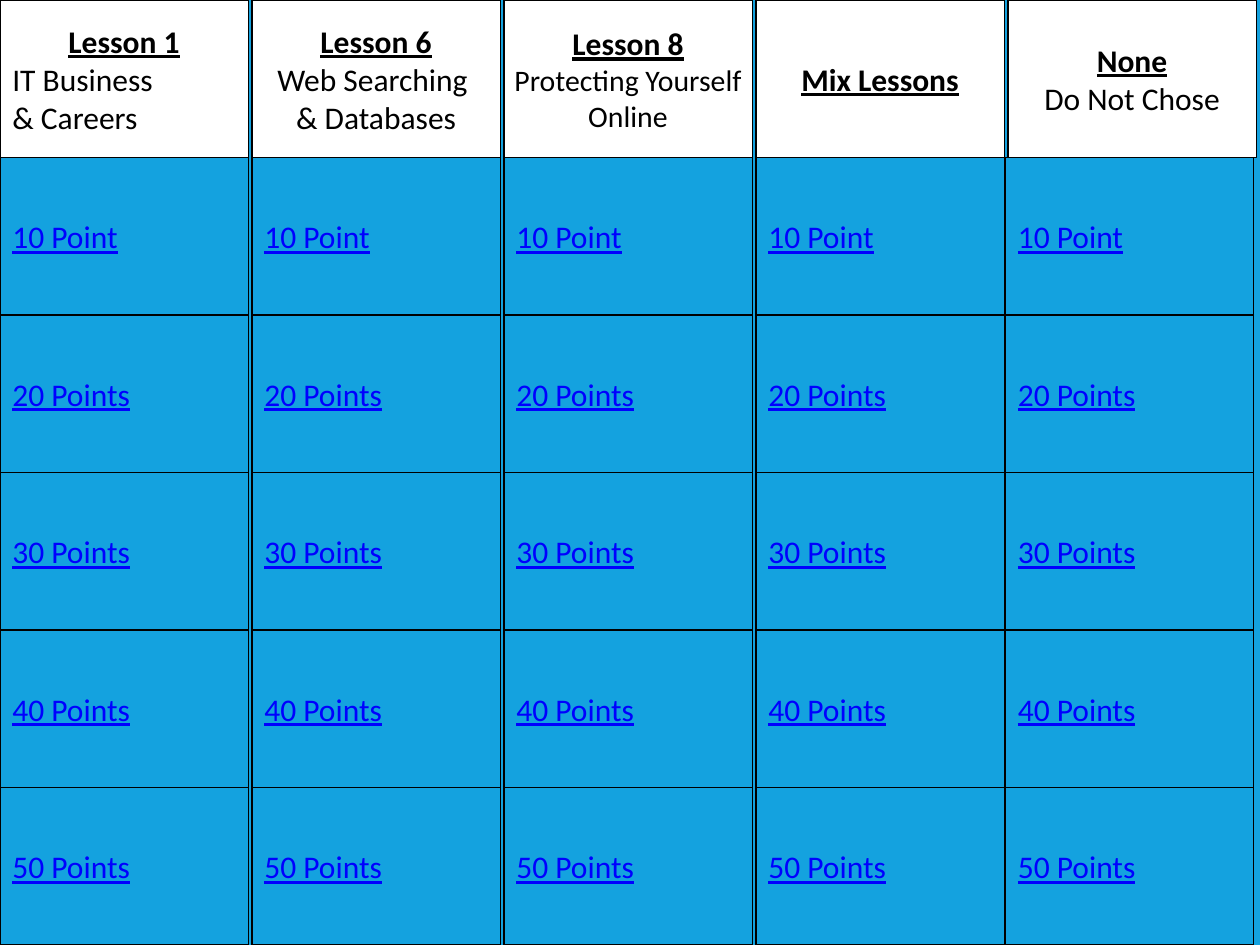
from pptx import Presentation
from pptx.dml.color import RGBColor
from pptx.enum.shapes import MSO_SHAPE
from pptx.enum.text import MSO_ANCHOR, PP_ALIGN as Align
from pptx.util import Inches, Pt

BLUE, WHITE, BLACK, LINK = "14A2DF", "FFFFFF", "000000", "0000FF"

prs = Presentation()
prs.slide_width, prs.slide_height = Inches(10), Inches(7.5)
s = prs.slides.add_slide(prs.slide_layouts[6])

# Grid: five columns, one heading row and five rows of points
COL_W, ROW_H = prs.slide_width // 5, prs.slide_height // 6
BUTTON_W = Inches(1.97)
LAST_COL_SHIFT = Inches(0.02)


def paint(fill, color):
    fill.solid()
    fill.fore_color.rgb = RGBColor.from_string(color)


def add_button(left, top, lines, fill, color=BLACK):
    """Add a button; each line is (text, format)."""
    sp = s.shapes.add_shape(MSO_SHAPE.ACTION_BUTTON_CUSTOM, left, top, BUTTON_W, ROW_H)
    sp.shadow.inherit = False
    paint(sp.fill, fill)
    paint(sp.line.fill, BLACK)
    sp.line.width = Pt(0.75)
    tf = sp.text_frame
    tf.word_wrap = False
    tf.vertical_anchor = MSO_ANCHOR.MIDDLE
    for i, (text, fmt) in enumerate(lines):
        p = tf.add_paragraph() if i else tf.paragraphs[0]
        p.alignment = fmt.get("align", Align.CENTER)
        r = p.add_run()
        r.text = text
        r.font.name = "Calibri"
        r.font.size = Pt(fmt.get("size", 18))
        r.font.bold = fmt.get("bold", False)
        r.font.underline = fmt.get("underline", False)
        paint(r.font.fill, color)


# Background
paint(s.background.fill, BLUE)

# Headings: title, lines below it and their format
headings = [
    ("Lesson 1", ["IT Business", "& Careers"], {"align": Align.LEFT}),
    ("Lesson 6", ["Web Searching ", "& Databases"], {}),
    ("Lesson 8", ["Protecting Yourself", "Online"], {"size": 17}),
    ("Mix Lessons", [], {}),
    ("None", ["Do Not Chose"], {}),
]
for col, (title, details, fmt) in enumerate(headings):
    lines = [(title, {"bold": True, "underline": True})]
    lines += [(text, fmt) for text in details]
    add_button(col * COL_W, 0, lines, WHITE)

# Point buttons
link = {"align": Align.LEFT, "underline": True}
points = ["10 Point", "20 Points", "30 Points", "40 Points", "50 Points"]
for row, label in enumerate(points, start=1):
    for col in range(5):
        left = col * COL_W - (LAST_COL_SHIFT if col == 4 else 0)
        add_button(left, row * ROW_H, [(label, link)], BLUE, LINK)

prs.save("out.pptx")
